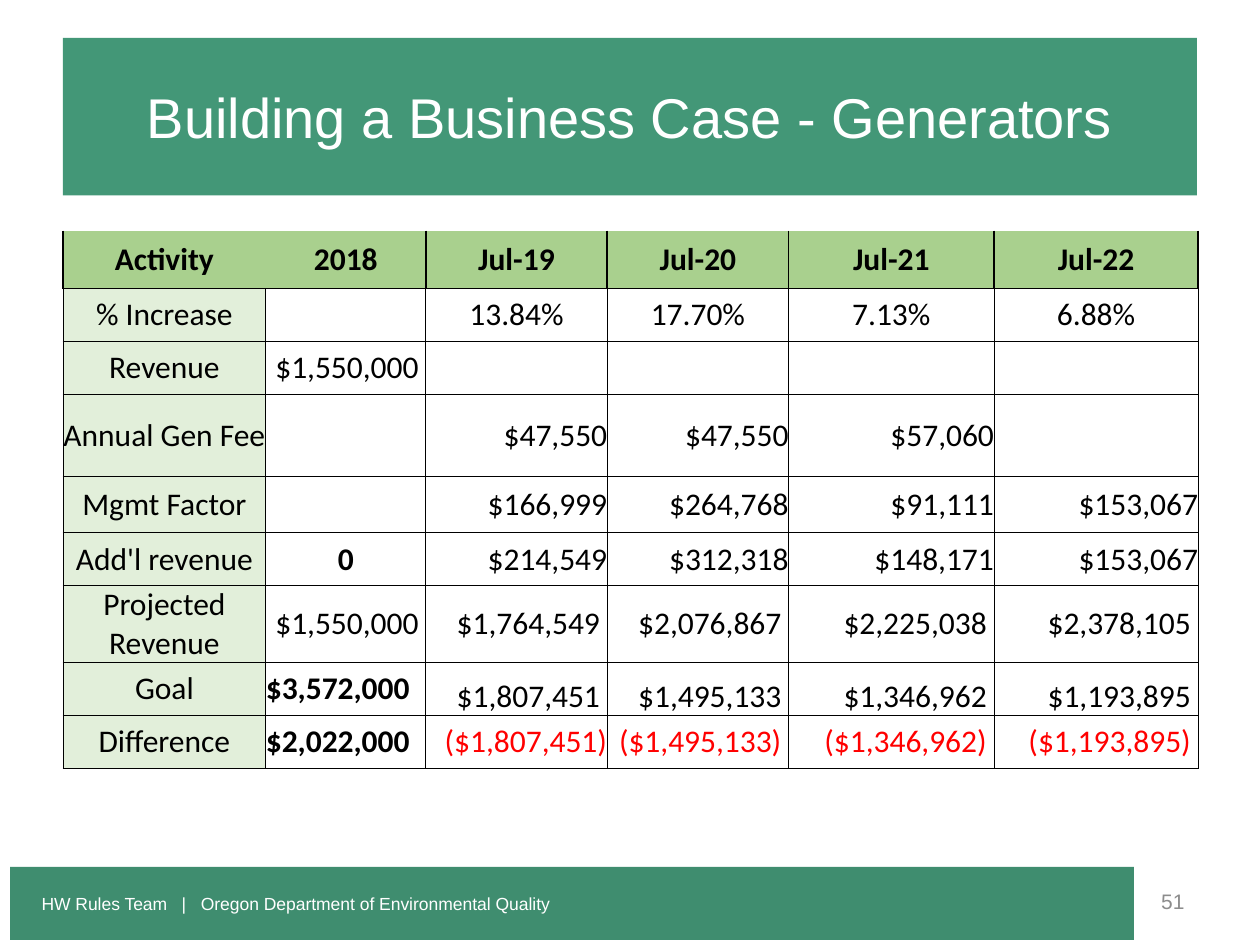
"""Build the generator business case slide."""
from lxml import etree
from pptx import Presentation
from pptx.dml.color import RGBColor
from pptx.enum.shapes import MSO_SHAPE
from pptx.enum.text import MSO_ANCHOR, PP_ALIGN
from pptx.oxml.ns import qn
from pptx.util import Inches, Pt

RECT = MSO_SHAPE.RECTANGLE
MIDDLE, BOTTOM = MSO_ANCHOR.MIDDLE, MSO_ANCHOR.BOTTOM
LEFT, CENTER, RIGHT, JUSTIFY = PP_ALIGN.LEFT, PP_ALIGN.CENTER, PP_ALIGN.RIGHT, PP_ALIGN.JUSTIFY

TITLE_GREEN = RGBColor(0x43, 0x97, 0x77)
FOOTER_GREEN = RGBColor(0x3F, 0x8D, 0x6F)
HEADER_GREEN = RGBColor(0xA9, 0xD0, 0x8E)
LABEL_GREEN = RGBColor(0xE2, 0xEF, 0xDA)
WHITE = RGBColor(0xFF, 0xFF, 0xFF)
BLACK = RGBColor(0, 0, 0)
GRAY = RGBColor(0x8C, 0x8C, 0x8C)
RED = RGBColor(0xFF, 0, 0)

COL_WIDTHS = [1.61, 1.27, 1.44, 1.44, 1.63, 1.62]
ROW_HEIGHTS = [0.46, 0.42, 0.42, 0.65, 0.45, 0.42, 0.61, 0.42, 0.42]
ROWS = [
    ["Activity", "2018", "Jul-19", "Jul-20", "Jul-21", "Jul-22"],
    ["% Increase", "", "13.84%", "17.70%", "7.13%", "6.88%"],
    ["Revenue", "$1,550,000 ", "", "", "", ""],
    ["Annual Gen Fee", "", "$47,550", "$47,550", "$57,060", ""],
    ["Mgmt Factor", "", "$166,999", "$264,768", "$91,111", "$153,067"],
    ["Add'l revenue", "0", "$214,549", "$312,318", "$148,171", "$153,067"],
    ["Projected Revenue", "$1,550,000 ", "$1,764,549 ", "$2,076,867 ", "$2,225,038 ", "$2,378,105 "],
    ["Goal", "$3,572,000 ", "$1,807,451 ", "$1,495,133 ", "$1,346,962 ", "$1,193,895 "],
    ["Difference", "$2,022,000 ", "($1,807,451)", "($1,495,133) ", "($1,346,962) ", "($1,193,895) "],
]


def write(tf, text, size=18, font="Calibri", color=BLACK, bold=False, align=CENTER):
    """Put one formatted paragraph into a text frame."""
    tf.word_wrap = True
    p = tf.paragraphs[0]
    p.alignment = align
    p.font.size = Pt(size)
    if text:
        r = p.add_run()
        r.text = text
        r.font.size, r.font.name, r.font.bold = Pt(size), font, bold
        r.font.color.rgb = color


def add_band(s, box, fill, text, indent=0.1, **fmt):
    """Add a filled rectangle with text."""
    sp = s.shapes.add_shape(RECT, *map(Inches, box))
    sp.shadow.inherit = False
    sp.fill.solid()
    sp.fill.fore_color.rgb = fill
    sp.line.fill.background()
    tf = sp.text_frame
    tf.vertical_anchor = MIDDLE
    tf.margin_left = Inches(indent)
    write(tf, text, font="Arial", color=WHITE, **fmt)


def add_page_number(s, text):
    """Add the page number beside the footer band."""
    tf = s.shapes.add_textbox(Inches(7.17), Inches(6.95), Inches(2.33), Inches(0.4)).text_frame
    tf.vertical_anchor = MIDDLE
    write(tf, text, size=12, font="Arial", color=GRAY, align=RIGHT)


def set_borders(cell, **widths):
    """Set the side lines of a cell in points; zero hides a side."""
    tc_pr = cell._tc.get_or_add_tcPr()
    for side in "LRTB":
        ln = etree.SubElement(tc_pr, qn(f"a:ln{side}"), w=str(Pt(widths[side])))
        if widths[side]:
            fill = etree.SubElement(ln, qn("a:solidFill"))
            etree.SubElement(fill, qn("a:srgbClr"), val=str(BLACK))
        else:
            etree.SubElement(ln, qn("a:noFill"))


def fill_cell(cell, row, col, text):
    """Format one cell by its row, column and value."""
    header, label = row == 0, col == 0
    goal, difference = row == 7, row == 8
    total = col == 1 and (goal or difference)
    cell.margin_left = cell.margin_right = cell.margin_top = cell.margin_bottom = 0
    cell.vertical_anchor = BOTTOM if goal and col > 1 else MIDDLE
    if header:
        set_borders(cell, L=0 if col == 1 else 1, R=0 if label else 1, T=0, B=0.5)
    else:
        set_borders(cell, L=0.5, R=0.5, T=0.5, B=0.5)
    if header or label:
        cell.fill.solid()
        cell.fill.fore_color.rgb = HEADER_GREEN if header else LABEL_GREEN
    else:
        cell.fill.background()
    if total:
        align = JUSTIFY
    else:
        align = CENTER if label or row < 2 or text == "0" else RIGHT
    write(cell.text_frame, text, align=align, bold=header or total or text == "0",
          color=RED if difference and col > 1 else BLACK)


def add_revenue_table(s):
    """Add the revenue table."""
    table = s.shapes.add_table(len(ROWS), len(COL_WIDTHS), Inches(0.5), Inches(1.83),
                               Inches(sum(COL_WIDTHS)), Inches(sum(ROW_HEIGHTS))).table
    table.first_row = table.horz_banding = False
    for column, width in zip(table.columns, COL_WIDTHS):
        column.width = Inches(width)
    for row, height in zip(table.rows, ROW_HEIGHTS):
        row.height = Inches(height)
    for i, values in enumerate(ROWS):
        for j, text in enumerate(values):
            fill_cell(table.cell(i, j), i, j, text)


def main():
    """Build and save the slide."""
    prs = Presentation()
    prs.slide_width, prs.slide_height = Inches(10), Inches(7.5)
    s = prs.slides.add_slide(prs.slide_layouts[6])
    add_band(s, (0.5, 0.3, 9, 1.25), TITLE_GREEN, "Building a Business Case - Generators", size=32)
    add_band(s, (0.08, 6.88, 8.92, 0.58), FOOTER_GREEN,
             "HW Rules Team   |   Oregon Department of Environmental Quality",
             indent=0.25, size=10, align=LEFT)
    add_page_number(s, "51")
    add_revenue_table(s)
    prs.save("out.pptx")


if __name__ == "__main__":
    main()
